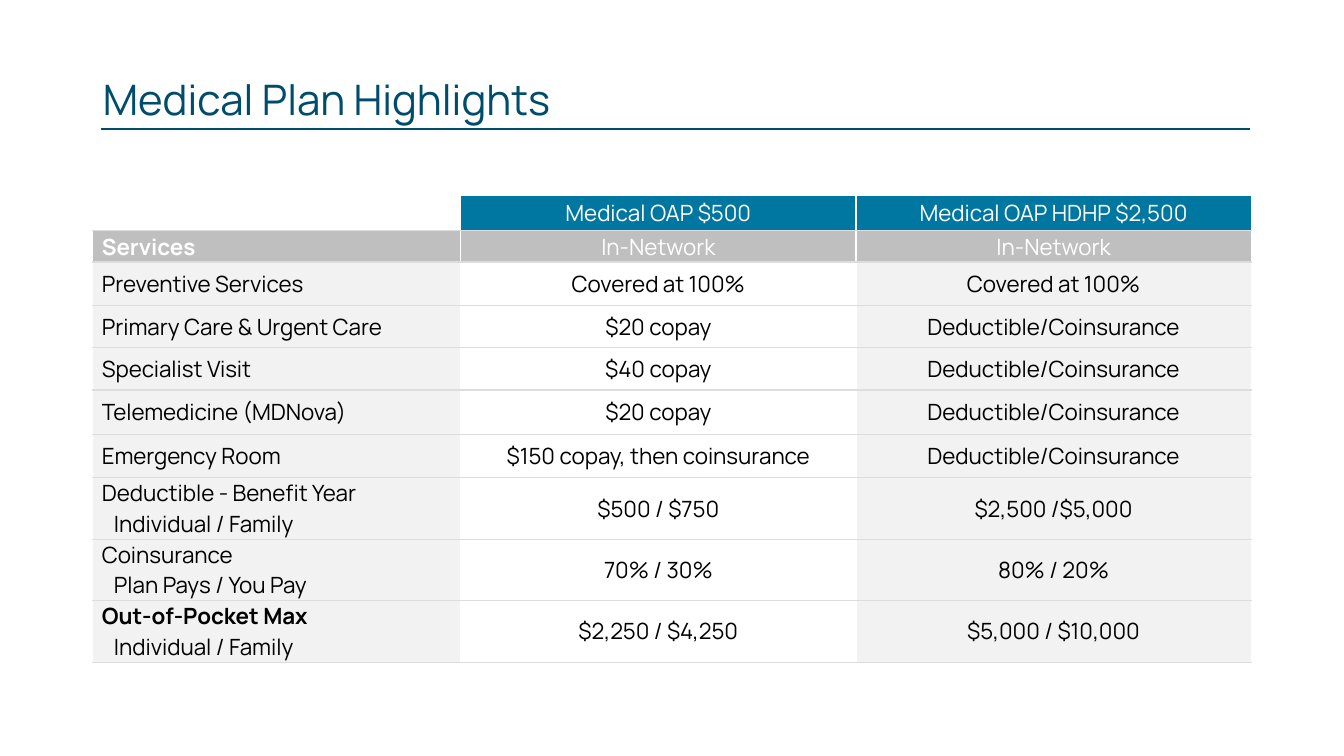
"""Build the medical plan highlights slide with its comparison table."""
from dataclasses import dataclass
from typing import Optional

from lxml.etree import SubElement
from pptx import Presentation
from pptx.dml.color import RGBColor
from pptx.enum.shapes import MSO_CONNECTOR
from pptx.enum.text import MSO_ANCHOR, MSO_AUTO_SIZE, PP_ALIGN
from pptx.oxml.ns import qn
from pptx.util import Inches, Pt

NAVY = RGBColor(0x00, 0x4C, 0x6C)
BLUE = RGBColor(0x00, 0x77, 0xA0)
GRAY = RGBColor(0xBF, 0xBF, 0xBF)
PALE = RGBColor(0xF2, 0xF2, 0xF2)
RULE = RGBColor(0xDD, 0xDD, 0xDD)
WHITE = RGBColor(0xFF, 0xFF, 0xFF)
BLACK = RGBColor(0x00, 0x00, 0x00)
FONT = "Manrope"
COLUMN_WIDTHS = (3.65, 3.92, 3.92)


@dataclass(frozen=True)
class PlanRow:
    height: float
    service: str
    plans: tuple[str, str]
    detail: str = ""
    bold: bool = False
    fills: tuple[Optional[RGBColor], ...] = (PALE, None, PALE)
    color: RGBColor = BLACK


ROWS = (
    PlanRow(0.35, "", ("Medical OAP $500", "Medical OAP HDHP $2,500"),
            fills=(None, BLUE, BLUE), color=WHITE),
    PlanRow(0.31, "Services", ("In-Network", "In-Network"), bold=True,
            fills=(GRAY, GRAY, GRAY), color=WHITE),
    PlanRow(0.43, "Preventive Services", ("Covered at 100%", "Covered at 100%")),
    PlanRow(0.42, "Primary Care & Urgent Care", ("$20 copay", "Deductible/Coinsurance")),
    PlanRow(0.42, "Specialist Visit", ("$40 copay", "Deductible/Coinsurance")),
    PlanRow(0.44, "Telemedicine (MDNova)", ("$20 copay", "Deductible/Coinsurance")),
    PlanRow(0.43, "Emergency Room",
            ("$150 copay, then coinsurance", "Deductible/Coinsurance")),
    PlanRow(0.61, "Deductible - Benefit Year", ("$500 / $750", "$2,500 /$5,000"),
            detail="Individual / Family"),
    PlanRow(0.61, "Coinsurance", ("70% / 30%", "80% / 20%"),
            detail="Plan Pays / You Pay"),
    PlanRow(0.61, "Out-of-Pocket Max", ("$2,250 / $4,250", "$5,000 / $10,000"),
            detail="Individual / Family", bold=True),
)


def apply_format(target, values: dict) -> None:
    for name, value in values.items():
        setattr(target, name, value)


def format_font(font, size: int, color: RGBColor, bold: bool = False) -> None:
    apply_format(font, {"name": FONT, "size": Pt(size), "bold": bold})
    font.color.rgb = color


def add_title(slide, text: str) -> None:
    title = slide.shapes.title
    apply_format(title, {"left": Inches(0.92), "top": Inches(0.74),
                         "width": Inches(11.5), "height": Inches(0.54)})
    frame = title.text_frame
    apply_format(frame, {"text": text, "word_wrap": True,
                         "auto_size": MSO_AUTO_SIZE.NONE,
                         "vertical_anchor": MSO_ANCHOR.MIDDLE})
    paragraph = frame.paragraphs[0]
    apply_format(paragraph, {"alignment": PP_ALIGN.LEFT, "line_spacing": 0.9,
                             "space_after": Pt(6)})
    format_font(paragraph.runs[0].font, 30, NAVY)


def add_title_rule(slide) -> None:
    rule = slide.shapes.add_connector(MSO_CONNECTOR.STRAIGHT, Inches(1), Inches(1.28),
                                      Inches(12.4), Inches(1.28))
    rule.line.color.rgb = NAVY
    rule.line.width = Pt(1.5)
    SubElement(rule._element.spPr, qn("a:effectLst"))


def set_borders(cell, top: RGBColor) -> None:
    properties = cell._tc.get_or_add_tcPr()
    sides = {"a:lnL": WHITE, "a:lnR": WHITE, "a:lnT": top, "a:lnB": RULE}
    for tag, color in sides.items():
        line = SubElement(properties, qn(tag), w=str(Pt(1)))
        fill = SubElement(line, qn("a:solidFill"))
        SubElement(fill, qn("a:srgbClr"), val=str(color))


def fill_cell(cell, row: PlanRow, column: int, top: RGBColor) -> None:
    apply_format(cell, {"vertical_anchor": MSO_ANCHOR.MIDDLE,
                        "margin_left": Inches(0.09), "margin_right": Inches(0.09),
                        "margin_top": 0, "margin_bottom": 0})
    set_borders(cell, top)
    fill = row.fills[column]
    if fill is None:
        cell.fill.background()
    else:
        cell.fill.solid()
        cell.fill.fore_color.rgb = fill

    paragraph = cell.text_frame.paragraphs[0]
    paragraph.text = (row.service, *row.plans)[column]
    paragraph.alignment = PP_ALIGN.CENTER if column else PP_ALIGN.LEFT
    format_font(paragraph.font, 16, row.color, row.bold and column == 0)
    if row.detail and column == 0:
        detail = cell.text_frame.add_paragraph()
        detail.text = row.detail
        properties = detail._p.get_or_add_pPr()
        properties.set("marL", str(Inches(0.37)))
        properties.set("indent", str(Inches(-0.25)))
        format_font(detail.font, 16, row.color)
    for paragraph in cell.text_frame.paragraphs:
        for run in paragraph.runs:
            format_font(run.font, 16, row.color, bool(paragraph.font.bold))


def add_plan_table(slide) -> None:
    frame = slide.shapes.add_table(
        len(ROWS), len(COLUMN_WIDTHS), Inches(0.92), Inches(1.94),
        Inches(sum(COLUMN_WIDTHS)), Inches(sum(row.height for row in ROWS)))
    table = frame.table
    apply_format(table, {"first_row": False, "horz_banding": False})
    for column, width in zip(table.columns, COLUMN_WIDTHS):
        column.width = Inches(width)
    for index, row in enumerate(ROWS):
        table.rows[index].height = Inches(row.height)
        for column in range(len(COLUMN_WIDTHS)):
            fill_cell(table.cell(index, column), row, column, RULE if index else WHITE)


def main() -> None:
    presentation = Presentation()
    presentation.slide_width = Inches(13.33)
    presentation.slide_height = Inches(7.5)
    slide = presentation.slides.add_slide(presentation.slide_layouts[5])
    add_title_rule(slide)
    add_title(slide, "Medical Plan Highlights")
    add_plan_table(slide)
    presentation.save("out.pptx")


if __name__ == "__main__":
    main()
